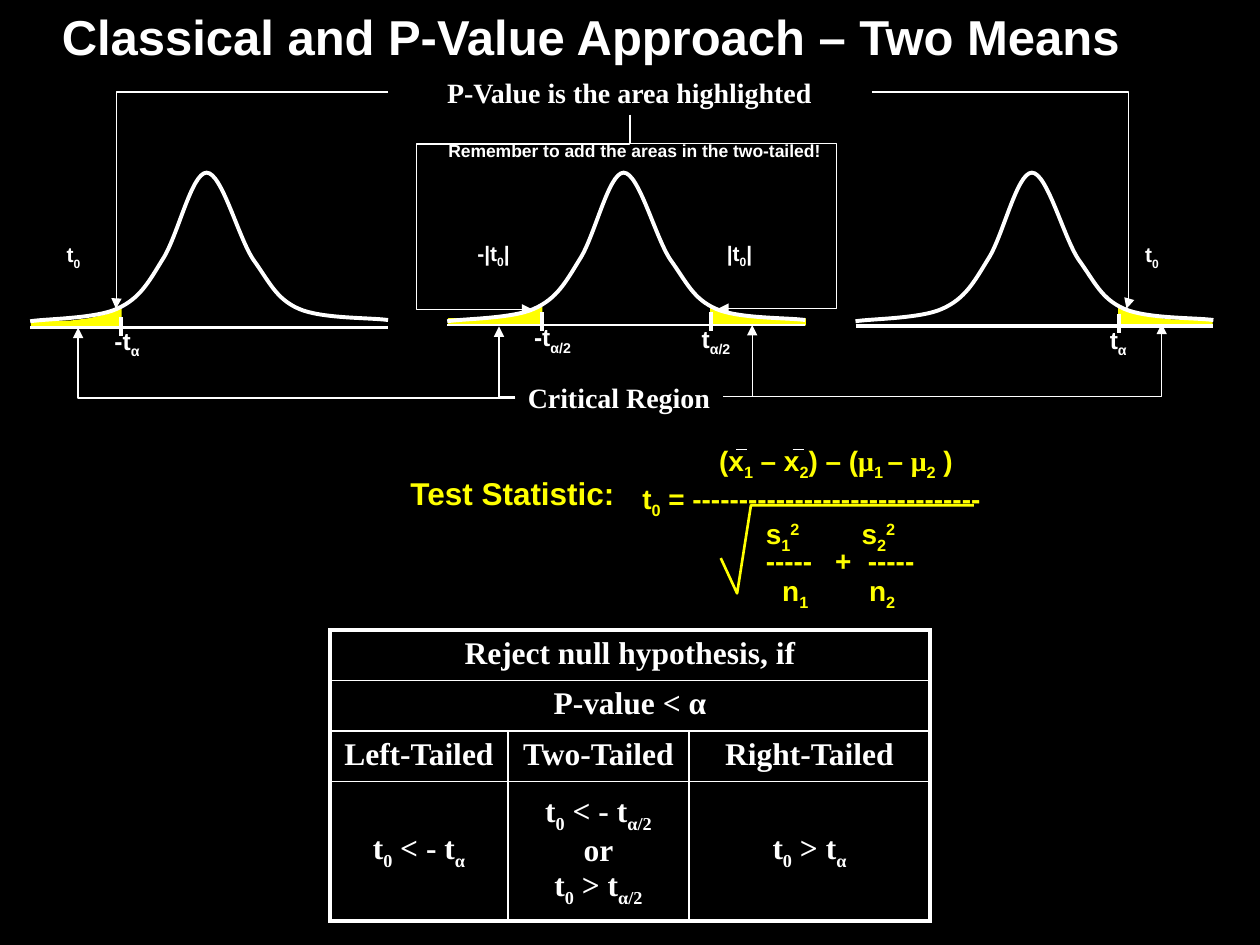
from lxml import etree
from pptx import Presentation
from pptx import util as u
from pptx.dml.color import RGBColor
from pptx.enum import shapes, text
from pptx.oxml.ns import qn

COLORS = {"ink": "FFFFFF", "accent": "FFFF00", "ground": "000000"}
SANS, SERIF = "Arial", "Times New Roman"
BASELINES = {"_": "-25000", "^": "30000"}
BELL = [(0, 1.18), (.11, 1.16), (.52, 1.16), (.69, 1.08), (.87, 1), (.94, .87),
        (1.05, .69), (1.17, .51), (1.28, 0), (1.4, 0), (1.52, 0), (1.65, .51),
        (1.77, .69), (1.9, .87), (1.95, 1), (2.13, 1.08), (2.31, 1.16),
        (2.69, 1.15), (2.84, 1.17)]
TAIL = [(0, .1), (0, .15), (1, .15), (1, 0), (.83, .05), (.65, .08), (.43, .1), (.2, .1)]
PANELS = [
    dict(left=.24, axis=2.6, weight=1.5, tails=[(.25, .96, 2.45)], tick=2.52,
         labels=[("-t~_α", (.81, 2.54, .41, .33))]),
    dict(left=3.55, axis=2.58, weight=1.5, tails=[(3.56, 4.3, 2.43), (6.39, 5.64, 2.43)],
         tick=2.48, labels=[("-t~_α/2", (4.14, 2.51, .51, .33)),
                            ("t~_α/2", (5.47, 2.52, .45, .33))]),
    dict(left=6.79, axis=2.59, weight=2.25, tails=[(9.62, 8.88, 2.44)], tick=2.49,
         labels=[("t~_α", (8.71, 2.53, .34, .33))]),
]
ELBOWS = [
    ((.62, 2.6, 3.47, .56), 2, {"rot": 180}, []),
    ((3.96, 2.59, .13, .56), 2, {"rot": 180}, []),
    ((5.74, 2.57, 3.48, .58), 2, {"flipV": 1}, []),
    ((5.74, 2.58, .23, .57), 2, {"flipV": 1}, []),
    ((.92, .73, 2.16, 1.72), 3, {"rot": 180, "flipV": 1}, [.998]),
    ((3.84, 1.3, 1.54, .77), 4, {"rot": 90}, [.149, 2.197]),
    ((6.92, .73, 2.02, 1.72), 3, {}, [1.009]),
    ((4.58, 1.33, 1.54, .7), 4, {"rot": 270, "flipH": 1}, [.149, 2.343]),
]
NOTES = [
    ("Test Statistic:", (3.16, 3.71, 1.84, .4), dict(size=18, color="accent")),
    ("Critical Region", (4.09, 2.97, 1.65, .37), dict(size=16, name=SERIF)),
    ("P-Value is the area highlighted", (3.08, .55, 3.83, .37),
     dict(size=16, name=SERIF, align="CENTER")),
    ("|t~_0~|", (5.67, 1.86, .41, .3), dict(size=12)),
    ("-|t~_0~|", (3.69, 1.86, .47, .3), dict(size=12)),
    ("t~_0", (.43, 1.87, .32, .3), dict(size=12)),
    ("t~_0", (8.99, 1.87, .32, .3), dict(size=12)),
    ("Remember to add the areas in the two-tailed!", (3.46, 1.06, 3.16, .27), dict(size=10)),
]
FORMULA = [
    ("\t(x~_1~ – x~_2~) – (~*μ~_1 ~– ~*μ~_2~ )", [.61], 1),
    ("t~_0~ = -------------------------------", [], 1),
    ("\ts~_1~^2~\ts~_2~^2", [.98, 1.74], .8),
    ("\t-----\t+\t-----", [.98, 1.53, 1.79], .8),
    ("\tn~_1~\tn~_2", [1.11, 1.8], .8),
]
RULES = [["Reject null hypothesis, if"], ["P-value < α"],
         ["Left-Tailed", "Two-Tailed", "Right-Tailed"],
         ["t~_0~ < - t~_α", "t~_0~ < - t~_α/2~\n~or~\n~t~_0~ > t~_α/2", "t~_0~ > t~_α"]]


def rgb(key):
    """Return the named colour."""
    return RGBColor.from_string(COLORS[key])


def inches(values):
    """Turn numbers into lengths."""
    return [u.Inches(value) for value in values]


def write(para, markup, size, name=SANS, color="ink", align="LEFT"):
    """Fill a paragraph; ~ parts runs, _ lowers, ^ raises and * sets a run in serif."""
    para.alignment = getattr(text.PP_ALIGN, align)
    for part in markup.split("~"):
        if part == "\n":
            para.add_line_break()
            continue
        mark = part[0] if part[0] in "_^*" else ""
        span = para.add_run()
        span.text = part[len(mark):]
        looks = dict(size=u.Pt(size), bold=True, name=SERIF if mark == "*" else name)
        for key, value in looks.items():
            setattr(span.font, key, value)
        span.font.color.rgb = rgb(color)
        if mark in BASELINES:
            span.font._element.set("baseline", BASELINES[mark])


def set_frame(frame, wrap=False):
    """Give a text frame its common settings."""
    looks = dict(word_wrap=wrap, auto_size=text.MSO_AUTO_SIZE.SHAPE_TO_FIT_TEXT,
                 vertical_anchor=text.MSO_ANCHOR.TOP)
    for key, value in looks.items():
        setattr(frame, key, value)


def add_note(page, box, markup, **looks):
    """Place one line of text."""
    frame = page.shapes.add_textbox(*inches(box)).text_frame
    set_frame(frame, wrap=looks.get("align") == "CENTER")
    write(frame.paragraphs[0], markup, **looks)


def add_line(page, start, end, weight, kind=shapes.MSO_CONNECTOR.STRAIGHT):
    """Draw a plain white connector."""
    line = page.shapes.add_connector(kind, *inches(start + end))
    line.line.color.rgb = rgb("ink")
    line.line.width = u.Pt(weight)
    etree.SubElement(line._element.spPr, qn("a:effectLst"))
    return line


def add_outline(page, points, color, weight, filled=False):
    """Draw a freeform through the points, closed when filled."""
    points = [inches(point) for point in points]
    builder = page.shapes.build_freeform(*points[0], scale=1.0)
    builder.add_line_segments(points[1:], close=filled)
    shape = builder.convert_to_shape()
    shape.shadow.inherit = False
    if filled:
        shape.fill.solid()
        shape.fill.fore_color.rgb = rgb(color)
    else:
        shape.fill.background()
    shape.line.color.rgb = rgb(color)
    shape.line.width = u.Pt(weight)
    return shape


def add_bell(page, left, top):
    """Draw the bell curve by turning each three segments into one Bezier."""
    shape = add_outline(page, [(left + x, top + y) for x, y in BELL], "ink", 2.25)
    steps = list(shape._element.iter(qn("a:lnTo")))
    for first, second, third in zip(steps[::3], steps[1::3], steps[2::3]):
        first.tag = qn("a:cubicBezTo")
        for step in (second, third):
            first.append(step[0])
            step.getparent().remove(step)


def add_panel(page, left, axis, weight, tails, tick, labels):
    """Draw one distribution with its shaded tails, axis, ticks and labels."""
    for outer, inner, top in tails:
        points = [(outer + (inner - outer) * x, top + y) for x, y in TAIL]
        add_outline(page, points, "accent", .75, filled=True)
    add_bell(page, left, 1.37)
    add_line(page, (left, axis), (left + 2.84, axis), weight)
    for outer, inner, top in tails:
        add_line(page, (inner, tick), (inner, tick + .15), 2.25)
    for markup, box in labels:
        add_note(page, box, markup, size=14)


def add_elbow(page, box, bends, turn, adjusts):
    """Draw a bent arrow in its unrotated box."""
    left, top, width, height = box
    line = add_line(page, (left, top), (left + width, top + height), .75,
                    shapes.MSO_CONNECTOR.ELBOW)
    props = line._element.spPr
    frame = props.find(qn("a:xfrm"))
    for key, value in turn.items():
        frame.set(key, str(value * 60000 if key == "rot" else value))
    shape = props.find(qn("a:prstGeom"))
    shape.set("prst", f"bentConnector{bends}")
    guides = shape.find(qn("a:avLst"))
    for number, value in enumerate(adjusts, 1):
        etree.SubElement(guides, qn("a:gd"), name=f"adj{number}",
                         fmla=f"val {round(value * 100000)}")
    etree.SubElement(props.find(qn("a:ln")), qn("a:tailEnd"), type="triangle")


def add_formula(page, box):
    """Set the test statistic with its root sign and mean bars."""
    left, top = box[:2]
    frame = page.shapes.add_textbox(*inches(box)).text_frame
    set_frame(frame, wrap=True)
    for index, (markup, stops, spacing) in enumerate(FORMULA):
        para = frame.add_paragraph() if index else frame.paragraphs[0]
        tabs = etree.SubElement(para._p.get_or_add_pPr(), qn("a:tabLst"))
        for stop in stops:
            etree.SubElement(tabs, qn("a:tab"), pos=str(u.Inches(stop)), algn="l")
        para.line_spacing = spacing
        write(para, markup, 16, color="accent")
    root = [(.72, .96), (.85, 1.24), (.96, .54), (2.73, .54)]
    add_outline(page, [(left + x, top + y) for x, y in root], "accent", 1.5)
    for x in (.84, 1.29):
        add_line(page, (left + x, top + .1), (left + x + .09, top + .1), .75)


def add_rules(page, box):
    """Build the table of rejection rules."""
    table = page.shapes.add_table(4, 3, *inches(box)).table
    for column, width in zip(table.columns, inches((1.41, 1.44, 1.91))):
        column.width = width
    for row, height in zip(table.rows, inches((.4, .4, .4, 1.11))):
        row.height = height
    for r in range(4):
        for c in range(3):
            cell = table.cell(r, c)
            edges = {"L": c == 0, "R": c == 2 or r < 2, "T": r == 0, "B": r == 3}
            for side, outer in edges.items():
                edge = etree.SubElement(cell._tc.get_or_add_tcPr(), qn(f"a:ln{side}"),
                                        w=str(u.Pt(2.25 if outer else 1)))
                fill = etree.SubElement(edge, qn("a:solidFill"))
                etree.SubElement(fill, qn("a:srgbClr"), val=COLORS["ink"])
            cell.fill.background()
            if r == 3:
                cell.vertical_anchor = text.MSO_ANCHOR.MIDDLE
            if c < len(RULES[r]):
                write(cell.text_frame.paragraphs[0], RULES[r][c], 18, SERIF, align="CENTER")
    for r in (0, 1):
        table.cell(r, 0).merge(table.cell(r, 2))


def add_title(page, box):
    """Place and format the title."""
    title = page.shapes.title
    title.left, title.top, title.width, title.height = inches(box)
    set_frame(title.text_frame)
    write(title.text_frame.paragraphs[0], "Classical and P-Value Approach – Two Means", 28)


def main():
    """Build and save the slide."""
    deck = Presentation()
    deck.slide_width, deck.slide_height = inches((10, 7.5))
    page = deck.slides.add_slide(deck.slide_layouts[5])
    page.background.fill.solid()
    page.background.fill.fore_color.rgb = rgb("ground")
    add_title(page, (.39, 0, 8.68, .57))
    for panel in PANELS:
        add_panel(page, **panel)
    for elbow in ELBOWS:
        add_elbow(page, *elbow)
    for markup, box, looks in NOTES:
        add_note(page, box, markup, **looks)
    add_rules(page, (2.62, 5, 4.76, 2.31))
    add_formula(page, (5, 3.47, 2.93, 1.28))
    deck.save("out.pptx")


if __name__ == "__main__":
    main()
